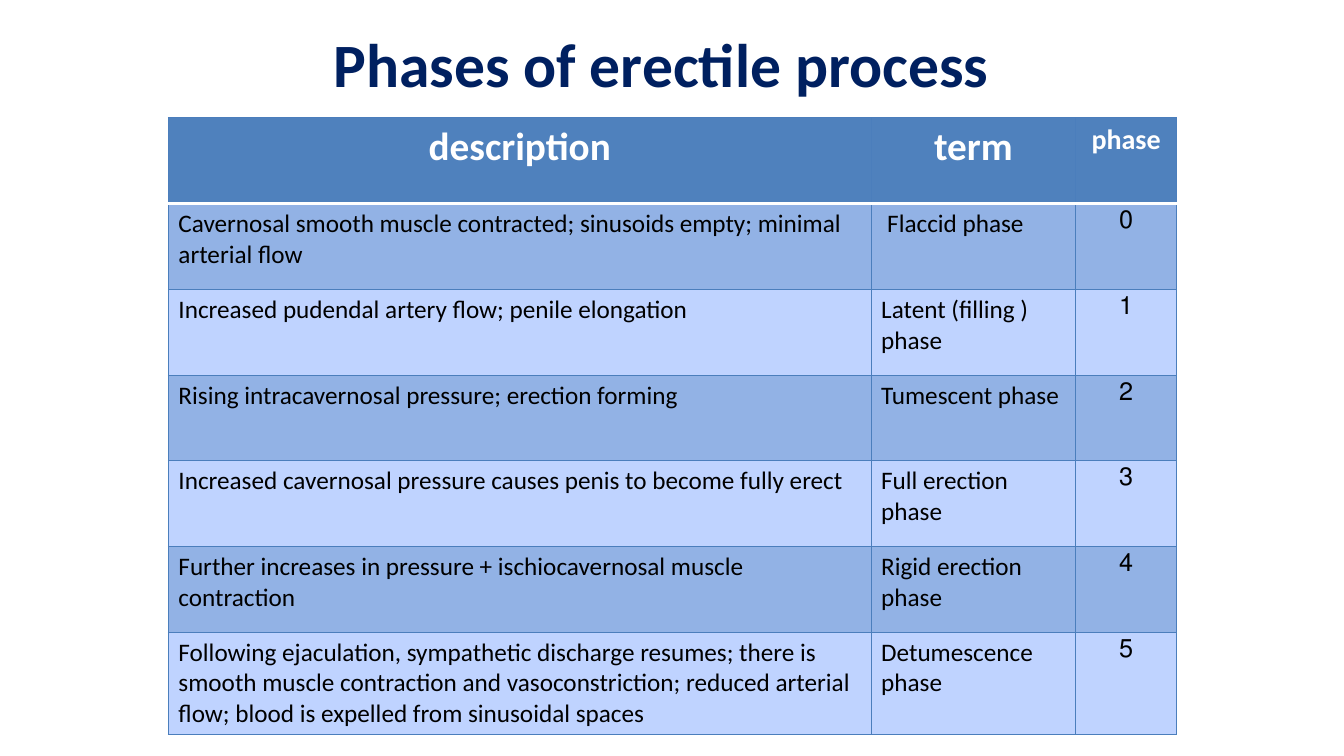
from dataclasses import dataclass

from lxml.etree import SubElement
from pptx import Presentation
from pptx.dml.color import RGBColor
from pptx.enum.text import MSO_ANCHOR, PP_ALIGN
from pptx.oxml.ns import qn
from pptx.util import Inches, Pt

TITLE = "Phases of erectile process"
HEADINGS = [("description", 28), ("term", 28), ("phase", 20)]
PHASES = [
    ("Cavernosal smooth muscle contracted; sinusoids empty; minimal arterial flow", "Flaccid phase"),
    ("Increased pudendal artery flow; penile elongation", "Latent (filling ) phase"),
    ("Rising intracavernosal pressure; erection forming", "Tumescent phase"),
    ("Increased cavernosal pressure causes penis to become fully erect", "Full erection phase"),
    ("Further increases in pressure + ischiocavernosal muscle contraction", "Rigid erection phase"),
    ("Following ejaculation, sympathetic discharge resumes; there is smooth muscle contraction "
     "and vasoconstriction; reduced arterial flow; blood is expelled from sinusoidal spaces",
     "Detumescence phase"),
]
COLUMN_WIDTHS = [6.97, 2.03, 1]
ROW_HEIGHT = 0.85
TABLE_LEFT, TABLE_TOP = 1.67, 1.17
FIRST_TERM_MARGIN = 0.16


@dataclass(frozen=True)
class Theme:
    font: str = "Calibri"
    title: str = "002060"
    header: str = "4F81BD"
    dark_band: str = "92B2E5"
    light_band: str = "BFD3FF"
    rule: str = "4B7EBC"
    white: str = "FFFFFF"
    black: str = "000000"
    title_size: int = 44
    body_size: int = 18
    rule_width: float = 0.75
    header_rule_width: float = 2


THEME = Theme()


def style_text(paragraph, size, color, bold, align):
    paragraph.alignment = align
    font = paragraph.font
    font.name, font.size, font.bold = THEME.font, Pt(size), bold
    font.color.rgb = RGBColor.from_string(color)


def add_border(cell, side, color, width):
    line = SubElement(cell._tc.get_or_add_tcPr(), qn(f"a:ln{side}"), w=str(Pt(width)))
    SubElement(SubElement(line, qn("a:solidFill")), qn("a:srgbClr"), val=color)


def fill_cell(cell, text, size, color, bold, align, fill, row):
    cell.text = text
    style_text(cell.text_frame.paragraphs[0], size, color, bold, align)
    header_rule = (THEME.white, THEME.header_rule_width)
    plain_rule = (THEME.rule, THEME.rule_width)
    header_sides = {(0, "B"), (1, "T")}
    for side in "LRTB":
        add_border(cell, side, *(header_rule if (row, side) in header_sides else plain_rule))
    cell.fill.solid()
    cell.fill.fore_color.rgb = RGBColor.from_string(fill)


def add_title(slide):
    title = slide.shapes.title
    title.left, title.top, title.width, title.height = map(Inches, (2.06, 0, 9, 1.25))
    title.text_frame.text = TITLE
    title.text_frame.vertical_anchor = MSO_ANCHOR.MIDDLE
    style_text(title.text_frame.paragraphs[0], THEME.title_size, THEME.title, True, PP_ALIGN.CENTER)


def add_phase_table(slide):
    row_count = len(PHASES) + 1
    table = slide.shapes.add_table(
        row_count, len(HEADINGS), Inches(TABLE_LEFT), Inches(TABLE_TOP),
        Inches(sum(COLUMN_WIDTHS)), Inches(ROW_HEIGHT * row_count)).table
    for column, width in zip(table.columns, COLUMN_WIDTHS):
        column.width = Inches(width)
    for table_row in table.rows:
        table_row.height = Inches(ROW_HEIGHT)

    for column, (heading, size) in enumerate(HEADINGS):
        fill_cell(table.cell(0, column), heading, size, THEME.white, True,
                  PP_ALIGN.CENTER, THEME.header, 0)
    for number, (description, term) in enumerate(PHASES):
        row = number + 1
        band = THEME.light_band if number % 2 else THEME.dark_band
        for column, text in enumerate((description, term, str(number))):
            align = PP_ALIGN.CENTER if column == 2 else PP_ALIGN.LEFT
            fill_cell(table.cell(row, column), text, THEME.body_size, THEME.black, False,
                      align, band, row)
        number_paragraph = table.cell(row, 2).text_frame.paragraphs[0]
        number_paragraph._p.get_or_add_pPr().set("rtl", "1")
    table.cell(1, 1).margin_left = Inches(FIRST_TERM_MARGIN)


def main():
    deck = Presentation()
    deck.slide_width, deck.slide_height = Inches(13.33), Inches(7.5)
    slide = deck.slides.add_slide(deck.slide_layouts[5])
    add_title(slide)
    add_phase_table(slide)
    deck.save("out.pptx")


if __name__ == "__main__":
    main()
